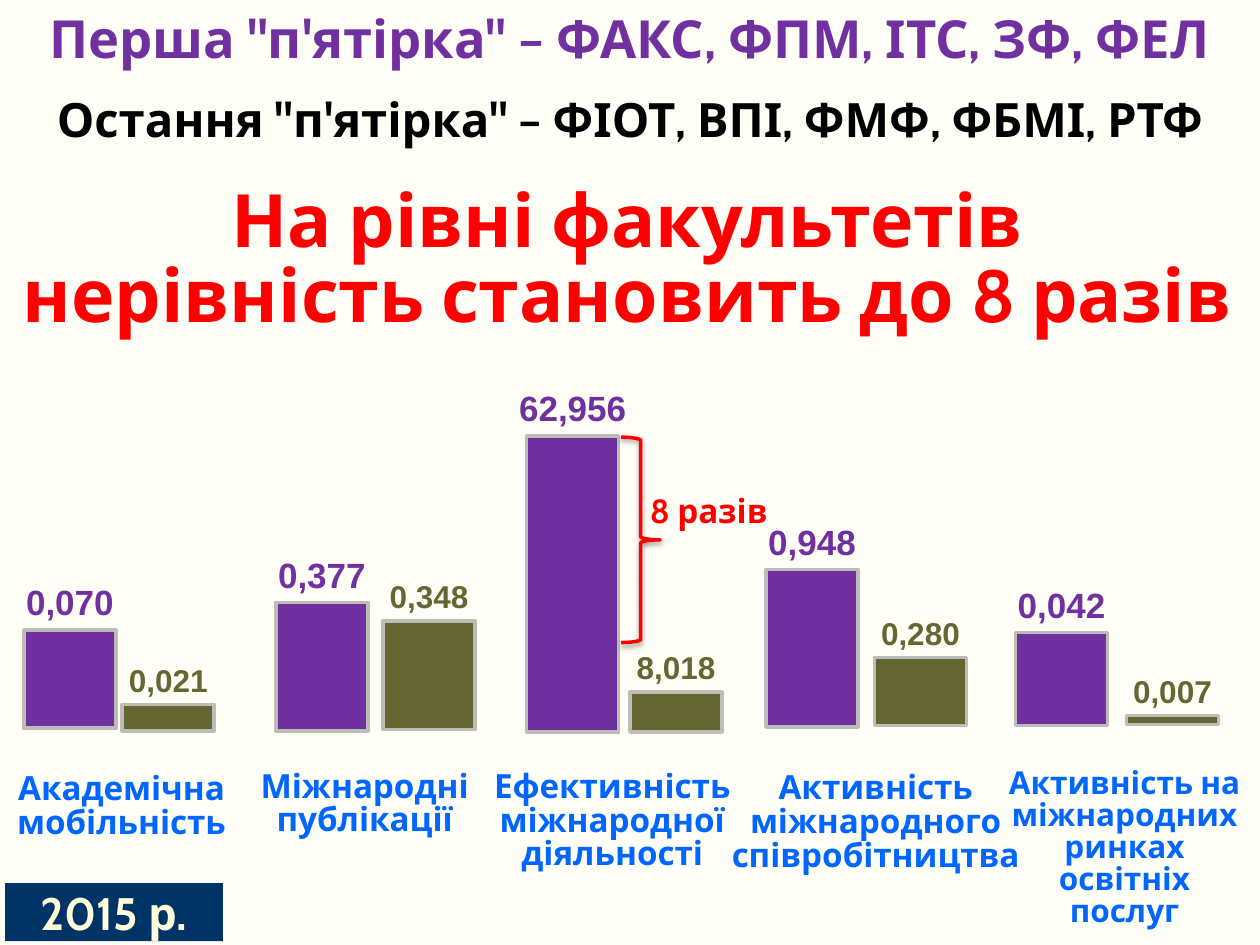
"""Build a slide comparing the first and last five faculties in 2015."""
from dataclasses import dataclass

import pptx
import pptx.dml.color
import pptx.enum.shapes
import pptx.enum.text
import pptx.oxml
import pptx.oxml.ns
import pptx.util

Inches = pptx.util.Inches
RGBColor = pptx.dml.color.RGBColor
SHAPES = pptx.enum.shapes.MSO_SHAPE
ALIGN = pptx.enum.text.PP_ALIGN
ANCHOR = pptx.enum.text.MSO_ANCHOR

IVORY = RGBColor(0xFF, 0xFF, 0xF7)
PURPLE = RGBColor(0x70, 0x30, 0xA0)
OLIVE = RGBColor(0x66, 0x66, 0x33)
GREY = RGBColor(0xBD, 0xBD, 0xB7)
RED = RGBColor(0xFF, 0x00, 0x00)
BLUE = RGBColor(0x00, 0x66, 0xFF)
BLACK = RGBColor(0x00, 0x00, 0x00)
NAVY = RGBColor(0x00, 0x33, 0x66)
CREAM = RGBColor(0xFF, 0xFF, 0xD9)

BAR_WIDTH = 0.73
WIDE = (0.1, 0.05)
TIGHT = (0.02, 0.01)


@dataclass
class Style:
    """Look of a block of text."""

    size: int
    color: RGBColor
    font: str = "Cabin"
    spacing: float = 1.0
    insets: tuple[float, float] = WIDE
    wrap: bool = True


@dataclass
class Bar:
    """One bar with its value, placed in inches."""

    value: str
    left: float
    top: float
    height: float


@dataclass
class Indicator:
    """A pair of bars and the caption beneath them."""

    caption: str
    box: tuple[float, float, float, float]
    first: Bar
    last: Bar
    style: Style


FIRST_VALUE = Style(20, PURPLE, "Arial", wrap=False)
LAST_VALUE = Style(18, OLIVE, "Arial", wrap=False)
CAPTION = Style(19, BLUE, spacing=0.85)
SMALL_CAPTION = Style(18, BLUE, spacing=0.85, insets=TIGHT)

INDICATORS = [
    Indicator("Академічна мобільність", (0, 6.09, 1.93, 0.64),
              Bar("0,070", 0.19, 5, 0.78), Bar("0,021", 0.97, 5.59, 0.21), CAPTION),
    Indicator("Міжнародні публікації", (1.96, 6.07, 1.87, 0.64),
              Bar("0,377", 2.19, 4.78, 1.02), Bar("0,348", 3.04, 4.93, 0.86), CAPTION),
    Indicator("Ефективність міжнародної діяльності", (3.71, 6.07, 2.3, 0.91),
              Bar("62,956", 4.18, 3.46, 2.35), Bar("8,018", 5, 5.49, 0.32), CAPTION),
    Indicator("Активність міжнародного співробітництва", (5.69, 6.08, 2.52, 0.91),
              Bar("0,948", 6.08, 4.52, 1.25), Bar("0,280", 6.94, 5.22, 0.54), CAPTION),
    Indicator("Активність на міжнародних ринках освітніх послуг", (7.93, 6.09, 1.99, 1.3),
              Bar("0,042", 8.06, 5.02, 0.74), Bar("0,007", 8.94, 5.68, 0.07), SMALL_CAPTION),
]

BRACE_SHADOW = (
    f'<a:effectLst {pptx.oxml.ns.nsdecls("a")}>'
    '<a:outerShdw blurRad="39370" dist="20320" dir="5400000" rotWithShape="0">'
    '<a:srgbClr val="000000"><a:alpha val="38000"/></a:srgbClr>'
    '</a:outerShdw></a:effectLst>'
)


def write(shape, text: str, style: Style, anchor=ANCHOR.TOP) -> None:
    """Fill a shape with one centred bold paragraph."""
    frame = shape.text_frame
    frame.auto_size = pptx.enum.text.MSO_AUTO_SIZE.NONE
    frame.word_wrap = style.wrap
    frame.vertical_anchor = anchor
    frame.margin_left = frame.margin_right = Inches(style.insets[0])
    frame.margin_top = frame.margin_bottom = Inches(style.insets[1])
    para = frame.paragraphs[0]
    para.text = text
    para.alignment = ALIGN.CENTER
    para.line_spacing = style.spacing
    para.font.name = style.font
    para.font.size = pptx.util.Pt(style.size)
    para.font.bold = True
    para.font.color.rgb = style.color


def add_text(page, text: str, box: tuple[float, float, float, float], style: Style) -> None:
    """Add a text box."""
    write(page.shapes.add_textbox(*map(Inches, box)), text, style)


def add_rectangle(page, box: tuple[float, float, float, float], color: RGBColor):
    """Add a plain filled rectangle without an outline."""
    shape = page.shapes.add_shape(SHAPES.RECTANGLE, *map(Inches, box))
    shape.shadow.inherit = False
    shape.fill.solid()
    shape.fill.fore_color.rgb = color
    shape.line.fill.background()
    return shape


def add_bar(page, bar: Bar, style: Style) -> None:
    """Add a bar with its value centred directly above it."""
    shape = add_rectangle(page, (bar.left, bar.top, BAR_WIDTH, bar.height), style.color)
    shape.line.color.rgb = GREY
    shape.line.width = pptx.util.Pt(2)
    width = 0.18 * len(bar.value)
    height = 0.022 * style.size
    left = bar.left + (BAR_WIDTH - width) / 2
    add_text(page, bar.value, (left, bar.top - height, width, height), style)


def add_brace(page) -> None:
    """Add the red brace marking the eightfold gap."""
    box = (4.93, 3.47, 0.31, 1.63)
    brace = page.shapes.add_shape(SHAPES.RIGHT_BRACE, *map(Inches, box))
    brace.fill.background()
    brace.line.color.rgb = RED
    brace.line.width = pptx.util.Pt(2)
    brace.element.spPr.append(pptx.oxml.parse_xml(BRACE_SHADOW))
    add_text(page, "8 разів", (5.03, 3.89, 1.19, 0.37), Style(19, RED, spacing=0.85))


def main() -> None:
    """Build and save the deck."""
    deck = pptx.Presentation()
    deck.slide_width, deck.slide_height = Inches(10), Inches(7.5)
    page = deck.slides.add_slide(deck.slide_layouts[5])
    page.background.fill.solid()
    page.background.fill.fore_color.rgb = IVORY

    title = page.shapes.title
    title.left, title.top, title.width, title.height = map(Inches, (0, 1.48, 9.96, 1.23))
    write(title, "На рівні факультетів\vнерівність становить до 8 разів",
          Style(42, RED, spacing=0.85, insets=TIGHT))

    add_text(page, "Перша \"п'ятірка\" – ФАКС, ФПМ, ІТС, ЗФ, ФЕЛ",
             (0, 0.04, 10, 0.53), Style(30, PURPLE, insets=TIGHT))
    add_text(page, "Остання \"п'ятірка\" – ФІОТ, ВПІ, ФМФ, ФБМІ, РТФ",
             (0, 0.71, 10, 0.48), Style(27, BLACK, insets=TIGHT))
    year = add_rectangle(page, (0.04, 7.01, 1.73, 0.46), NAVY)
    write(year, "2015 р.", Style(26, CREAM, insets=TIGHT), ANCHOR.MIDDLE)

    for indicator in INDICATORS:
        add_bar(page, indicator.first, FIRST_VALUE)
        add_bar(page, indicator.last, LAST_VALUE)
        add_text(page, indicator.caption, indicator.box, indicator.style)
    add_brace(page)
    deck.save("out.pptx")


if __name__ == "__main__":
    main()
